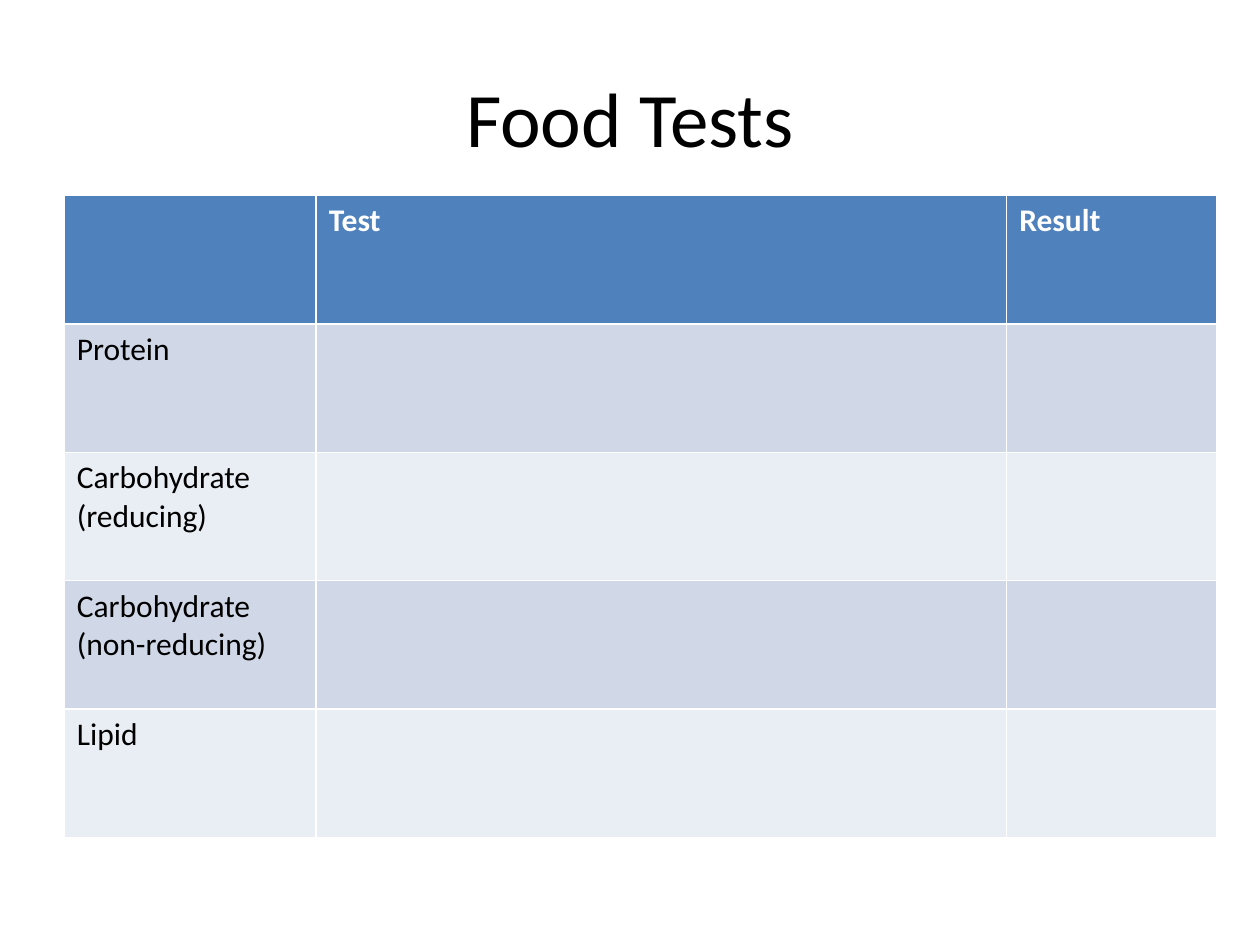
"""Build the Food Tests slide: a title above a table to fill in."""
import pptx
import pptx.util
import pptx.dml.color
import pptx.enum.text

Inches, Pt = pptx.util.Inches, pptx.util.Pt
RGB = pptx.dml.color.RGBColor.from_string
COLORS = {"header": "4F81BD", "odd": "D0D8E8", "even": "E9EDF4", "white": "FFFFFF", "black": "000000"}
ROWS = [
    ["", "Test", "Result"],
    ["Protein", "", ""],
    ["Carbohydrate (reducing)", "", ""],
    ["Carbohydrate (non-reducing)", "", ""],
    ["Lipid", "", ""],
]
WIDTHS = [2, 5.48, 1.67]
ROW_HEIGHT = 1.02


def set_font(p, size, color, bold=False):
    p.font.name = "Calibri"
    p.font.size = Pt(size)
    p.font.bold = bold
    p.font.color.rgb = RGB(COLORS[color])


prs = pptx.Presentation()
prs.slide_width, prs.slide_height = Inches(10), Inches(7.5)
s = prs.slides.add_slide(prs.slide_layouts[6])

title = s.shapes.add_textbox(Inches(0.5), Inches(0.3), Inches(9), Inches(1.25))
tf = title.text_frame
tf.word_wrap = True
tf.vertical_anchor = pptx.enum.text.MSO_ANCHOR.MIDDLE
p = tf.paragraphs[0]
p.text = "Food Tests"
p.alignment = pptx.enum.text.PP_ALIGN.CENTER
set_font(p, 44, "black")

table = s.shapes.add_table(
    len(ROWS), len(WIDTHS), Inches(0.51), Inches(1.55),
    Inches(sum(WIDTHS)), Inches(ROW_HEIGHT * len(ROWS)),
).table
for column, width in zip(table.columns, WIDTHS):
    column.width = Inches(width)

for i, texts in enumerate(ROWS):
    table.rows[i].height = Inches(ROW_HEIGHT)
    is_header = i == 0
    fill = "header" if is_header else "odd" if i % 2 else "even"
    for j, text in enumerate(texts):
        cell = table.cell(i, j)
        cell.fill.solid()
        cell.fill.fore_color.rgb = RGB(COLORS[fill])
        p = cell.text_frame.paragraphs[0]
        p.text = text
        set_font(p, 18, "white" if is_header else "black", is_header)

prs.save("out.pptx")
